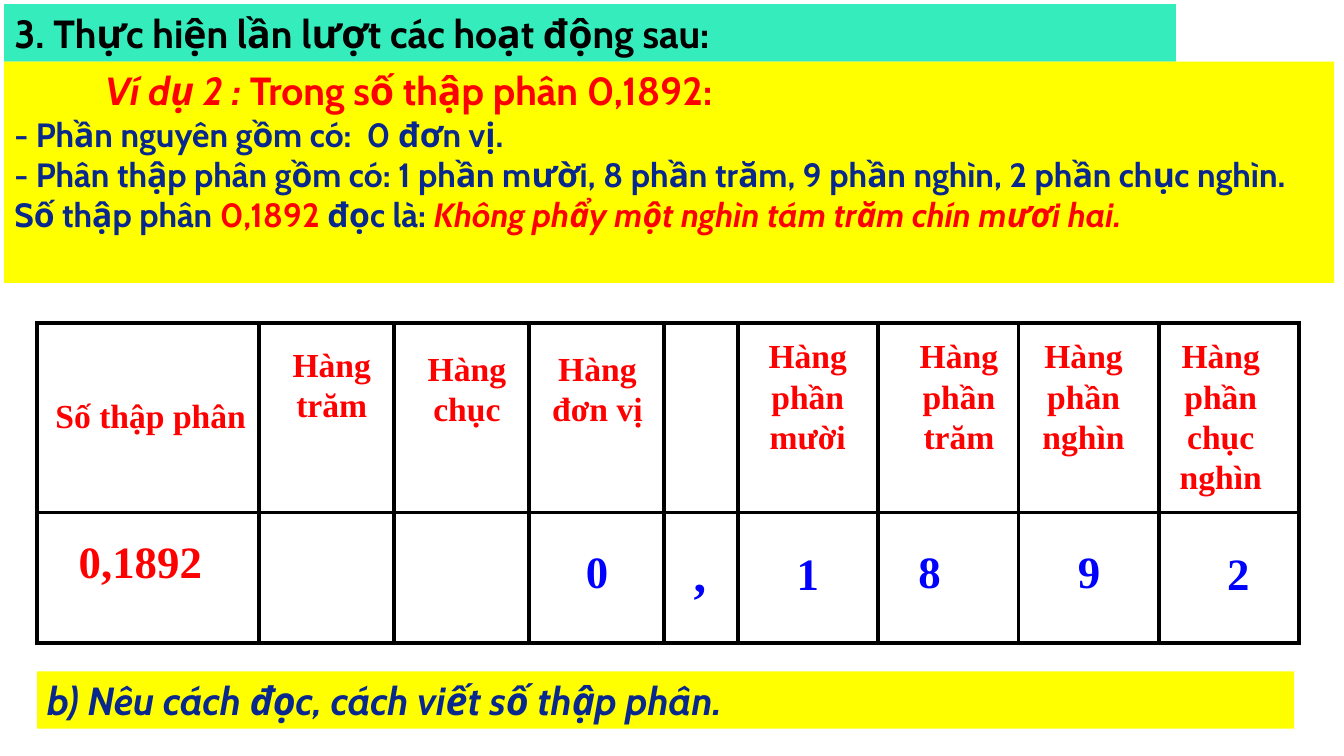
from lxml import etree
from pptx import Presentation
from pptx.dml.color import RGBColor
from pptx.enum.shapes import MSO_SHAPE
from pptx.enum.text import MSO_ANCHOR, MSO_AUTO_SIZE, PP_ALIGN
from pptx.oxml.ns import qn
from pptx.util import Pt

LEFT, CENTER, JUSTIFY = PP_ALIGN.LEFT, PP_ALIGN.CENTER, PP_ALIGN.JUSTIFY
TOP, MIDDLE = MSO_ANCHOR.TOP, MSO_ANCHOR.MIDDLE
FIXED = MSO_AUTO_SIZE.NONE
RECTANGLE = MSO_SHAPE.RECTANGLE

COLORS = {
    "teal": "34ECBC", "yellow": "FFFF00", "white": "FFFFFF", "black": "000000",
    "red": "FF0000", "navy": "09288D", "blue": "0000FF",
}
BODY_FONT, TABLE_FONT = "Cabin", "Times New Roman"


def set_font(font, name, size, color, italic=False):
    font.name = name
    font.size = Pt(size)
    font.bold = True
    font.italic = italic
    font.color.rgb = RGBColor.from_string(COLORS[color])


def make_strip(shape, left, top, width, height, fill, anchor):
    """Place a filled text strip and return its text frame."""
    shape.left, shape.top = Pt(left), Pt(top)
    shape.width, shape.height = Pt(width), Pt(height)
    shape.fill.solid()
    shape.fill.fore_color.rgb = RGBColor.from_string(COLORS[fill])
    frame = shape.text_frame
    frame.word_wrap = True
    frame.auto_size = FIXED
    frame.vertical_anchor = anchor
    return frame


deck = Presentation()
deck.slide_width, deck.slide_height = Pt(960), Pt(540)
page = deck.slides.add_slide(deck.slide_layouts[1])

# Heading
frame = make_strip(page.shapes.title, 3, 3, 837, 41, "teal", MIDDLE)
para = frame.paragraphs[0]
para.text = "3. Thực hiện lần lượt các hoạt động sau:"
para.alignment = LEFT
set_font(para.font, BODY_FONT, 28, "black")

# Worked example: alignment, first-line indent, spans of (text, size, color, italic)
example = [
    (LEFT, 65, [("Ví dụ 2 : ", 28, "red", True),
                ("Trong số thập phân 0,1892:", 28, "red", False)]),
    (JUSTIFY, 0, [("- Phần nguyên gồm có:  0 đơn vị.", 24, "navy", False)]),
    (JUSTIFY, 0, [("- Phân thập phân gồm có: 1 phần mười, 8 phần trăm, "
                   "9 phần nghìn, 2 phần chục nghìn.", 24, "navy", False)]),
    (LEFT, 0, [("Số thập phân ", 24, "navy", False),
               ("0,1892", 24, "red", False),
               (" đọc là: ", 24, "navy", False),
               ("Không phẩy một nghìn tám trăm chín mươi hai.", 24, "red", True)]),
]
frame = make_strip(page.placeholders[1], 3, 44, 950, 158, "yellow", TOP)
for index, (alignment, indent, spans) in enumerate(example):
    para = frame.add_paragraph() if index else frame.paragraphs[0]
    para.alignment = alignment
    para.space_before = Pt(0)
    properties = para._p.get_or_add_pPr()
    properties.set("marL", "0")
    properties.set("indent", str(Pt(indent)))
    etree.SubElement(properties, qn("a:buNone"))
    for text, size, color, italic in spans:
        span = para.add_run()
        span.text = text
        set_font(span.font, BODY_FONT, size, color, italic)

# Place-value grid
column_widths = [158.5] + [96.5] * 3 + [52.5] + [100.25] * 4
row_heights = [135.5, 93.5]
grid = page.shapes.add_table(
    len(row_heights), len(column_widths), Pt(26.5), Pt(230.5),
    Pt(sum(column_widths)), Pt(sum(row_heights))).table
for column, width in zip(grid.columns, column_widths):
    column.width = Pt(width)
for row, height in zip(grid.rows, row_heights):
    row.height = Pt(height)
for cell in grid.iter_cells():
    properties = cell._tc.get_or_add_tcPr()
    for side in ("lnL", "lnR", "lnT", "lnB"):
        border = etree.SubElement(properties, qn(f"a:{side}"), w=str(Pt(3)))
        paint = etree.SubElement(border, qn("a:solidFill"))
        etree.SubElement(paint, qn("a:srgbClr"), val=COLORS["black"])
    cell.fill.solid()
    cell.fill.fore_color.rgb = RGBColor.from_string(COLORS["white"])

# Grid labels: text, left, top, width, height, size, color, alignment
labels = [
    ("Số thập phân", 32.5, 278.5, 206, 36, 24, "red", LEFT),
    ("Hàng trăm", 198, 242, 78, 65.5, 24, "red", CENTER),
    ("Hàng chục", 294.5, 245, 78, 65.5, 24, "red", CENTER),
    ("Hàng đơn vị", 384, 245, 85.5, 65.5, 24, "red", CENTER),
    ("Hàng phần mười", 538, 236, 78, 94.5, 24, "red", CENTER),
    ("Hàng phần trăm", 646, 236, 78, 94.5, 24, "red", CENTER),
    ("Hàng phần nghìn", 735, 236, 78, 94.5, 24, "red", CENTER),
    ("Hàng phần chục nghìn", 833, 236, 78, 124, 24, "red", CENTER),
    ("0,1892", 26.5, 378, 147.5, 46, 32, "red", CENTER),
    ("0", 405.5, 385, 42, 46, 32, "blue", CENTER),
    (",", 479, 384, 42, 51, 36, "blue", CENTER),
    ("1", 556, 386, 42, 46, 32, "blue", CENTER),
    ("8", 643, 385, 42, 46, 32, "blue", CENTER),
    ("9", 757, 385, 42, 46, 32, "blue", CENTER),
    ("2", 863.5, 386, 42, 46, 32, "blue", CENTER),
]
for text, left, top, width, height, size, color, alignment in labels:
    box = page.shapes.add_textbox(Pt(left), Pt(top), Pt(width), Pt(height))
    box.text_frame.word_wrap = True
    para = box.text_frame.paragraphs[0]
    para.text = text
    para.alignment = alignment
    set_font(para.font, TABLE_FONT, size, color)

# Closing task
task = page.shapes.add_shape(RECTANGLE, 0, 0, 0, 0)
task.shadow.inherit = False
task.line.fill.background()
frame = make_strip(task, 26.5, 479.5, 898, 41, "yellow", TOP)
para = frame.paragraphs[0]
para.text = "b) Nêu cách đọc, cách viết số thập phân."
para.alignment = LEFT
set_font(para.font, BODY_FONT, 28, "navy", italic=True)

deck.save("out.pptx")
